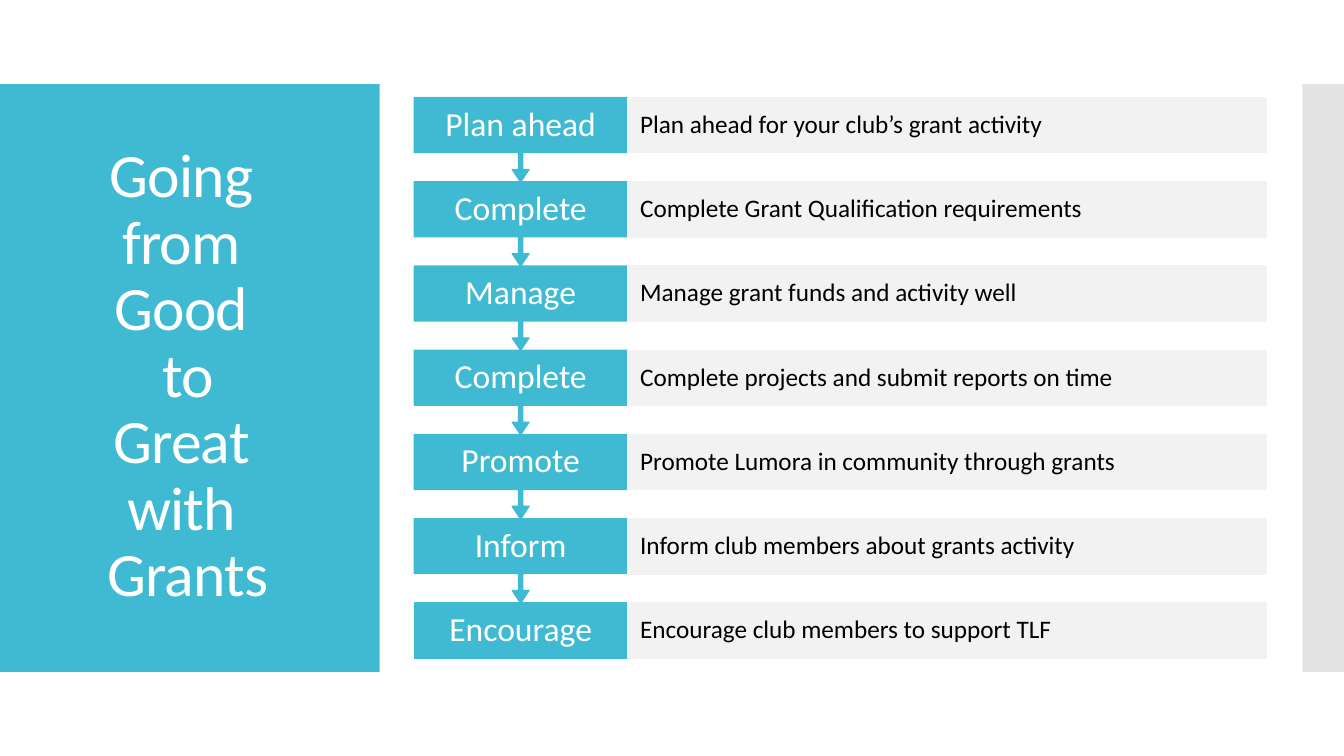
import pptx
import pptx.util
import pptx.dml.color
import pptx.enum.shapes
import pptx.enum.text
import pptx.oxml.ns
import lxml.etree

Pt = pptx.util.Pt
SHAPE = pptx.enum.shapes.MSO_SHAPE
ALIGN = pptx.enum.text.PP_ALIGN

TITLE = ["Going ", "from ", "Good ", "to", "Great ", "with ", "Grants"]
STEPS = [
    ("Plan ahead", "Plan ahead for your club’s grant activity"),
    ("Complete", "Complete Grant Qualification requirements"),
    ("Manage", "Manage grant funds and activity well"),
    ("Complete", "Complete projects and submit reports on time"),
    ("Promote", "Promote Lumora in community through grants"),
    ("Inform", "Inform club members about grants activity"),
    ("Encourage", "Encourage club members to support TLF"),
]
COLORS = {"teal": "40BAD2", "band": "C8C8C8", "detail": "F2F2F2",
          "white": "FFFFFF", "black": "000000"}
FONT = "Calibri"

SLIDE_W, SLIDE_H = 960, 540
PANEL_TOP, PANEL_H, PANEL_W = 60, 420, 271.2
BAND_W = 29.8
STEP_LEFT, STEP_W = 295.8, 152.2
DETAIL_W = 456.6
FIRST_TOP, PITCH = 69.7, 60.16
BOX_H, CALLOUT_H = 39.5, 60.4


def rgb(name):
    return pptx.dml.color.RGBColor.from_string(COLORS[name])


def add_block(slide, kind, left, top, width, height, color, outlined=False):
    block = slide.shapes.add_shape(kind, Pt(left), Pt(top), Pt(width), Pt(height))
    block.shadow.inherit = False
    block.fill.solid()
    block.fill.fore_color.rgb = rgb(color)
    if outlined:
        block.line.color.rgb = rgb(color)
        block.line.width = Pt(0.85)
    else:
        block.line.fill.background()
    return block


def write(block, text, size, color, align, side_inset):
    frame = block.text_frame
    frame.word_wrap = True
    frame.vertical_anchor = pptx.enum.text.MSO_ANCHOR.MIDDLE
    frame.margin_left = frame.margin_right = Pt(side_inset)
    frame.margin_top = frame.margin_bottom = 0
    paragraph = frame.paragraphs[0]
    paragraph.text = text
    paragraph.alignment = align
    paragraph.line_spacing = 0.9
    paragraph.font.name = FONT
    paragraph.font.size = Pt(size)
    paragraph.font.color.rgb = rgb(color)
    return paragraph


def add_title(slide):
    add_block(slide, SHAPE.RECTANGLE, 0, PANEL_TOP, PANEL_W, PANEL_H, "teal")
    title = slide.shapes.add_textbox(Pt(6.5), Pt(88.5), Pt(255.6), Pt(362.2))
    paragraph = write(title, "\v".join(TITLE), 44, "white", ALIGN.CENTER, 7.2)
    for run in paragraph.runs:
        run.font._element.set("spc", "-60")


def add_band(slide):
    band = add_block(slide, SHAPE.RECTANGLE, SLIDE_W - BAND_W, PANEL_TOP,
                     BAND_W, PANEL_H, "band")
    tint = band.fill._xPr.find(".//" + pptx.oxml.ns.qn("a:srgbClr"))
    lxml.etree.SubElement(tint, pptx.oxml.ns.qn("a:alpha"), val="50000")


def add_step(slide, index, label, detail):
    top = FIRST_TOP + index * PITCH
    if index < len(STEPS) - 1:
        step = add_block(slide, SHAPE.DOWN_ARROW_CALLOUT, STEP_LEFT, top,
                         STEP_W, CALLOUT_H, "teal", True)
        for position, ratio in enumerate((0.05, 0.1, 0.15, 0.65)):
            step.adjustments[position] = ratio
    else:
        step = add_block(slide, SHAPE.RECTANGLE, STEP_LEFT, top,
                         STEP_W, BOX_H, "teal", True)
    write(step, label, 24, "white", ALIGN.CENTER, 10.8)
    description = add_block(slide, SHAPE.RECTANGLE, STEP_LEFT + STEP_W, top,
                            DETAIL_W, BOX_H, "detail", True)
    write(description, detail, 18, "black", ALIGN.LEFT, 9.3)


def main():
    deck = pptx.Presentation()
    deck.slide_width, deck.slide_height = Pt(SLIDE_W), Pt(SLIDE_H)
    slide = deck.slides.add_slide(deck.slide_layouts[6])
    add_title(slide)
    add_band(slide)
    for index, (label, detail) in reversed(list(enumerate(STEPS))):
        add_step(slide, index, label, detail)
    deck.save("out.pptx")


if __name__ == "__main__":
    main()
